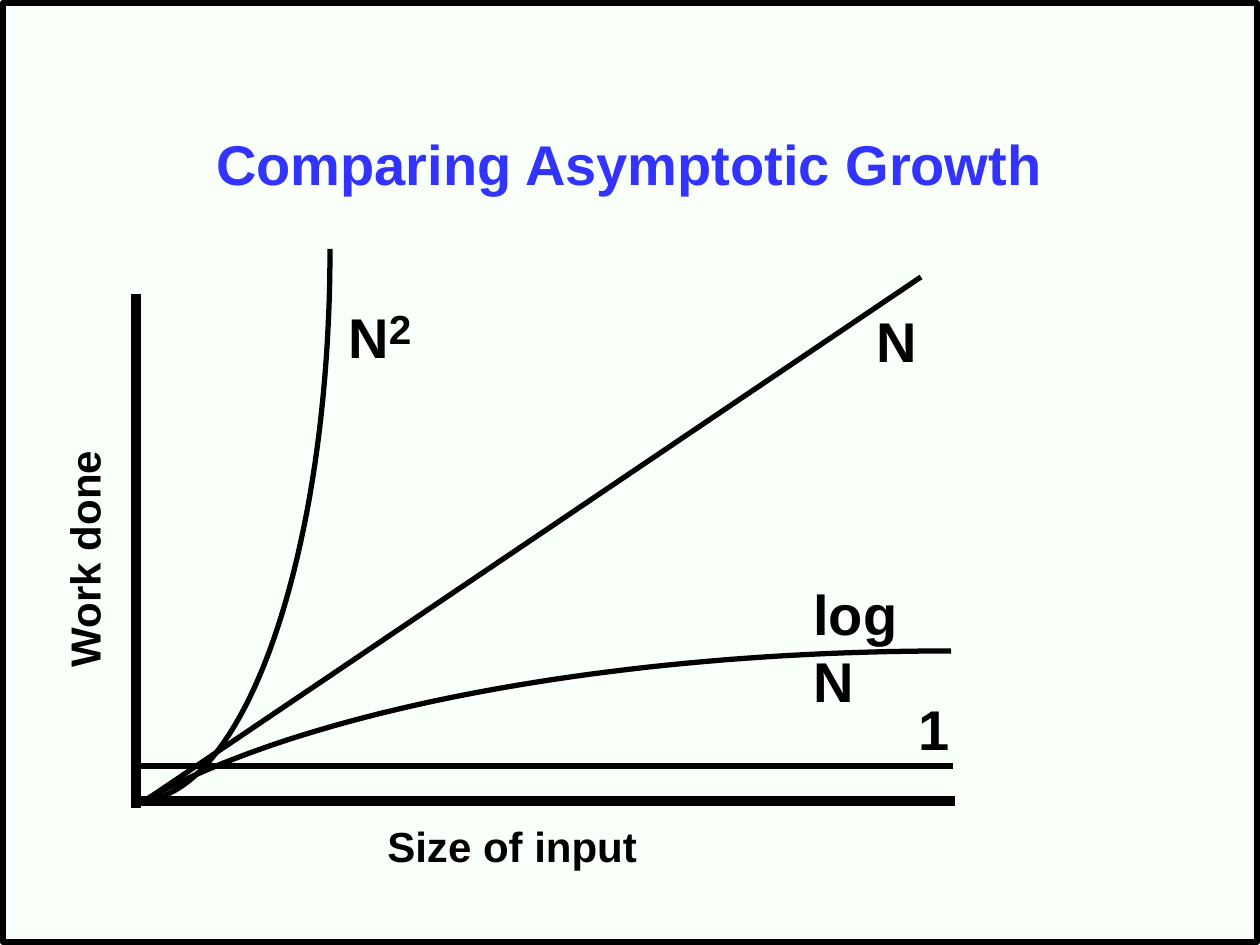
from lxml import etree
from pptx import Presentation
from pptx.dml.color import RGBColor
from pptx.enum.shapes import MSO_CONNECTOR, MSO_SHAPE
from pptx.enum.text import MSO_ANCHOR, PP_ALIGN
from pptx.oxml.ns import qn
from pptx.util import Pt

STRAIGHT = MSO_CONNECTOR.STRAIGHT
RECT = MSO_SHAPE.RECTANGLE
LEFT, CENTER = PP_ALIGN.LEFT, PP_ALIGN.CENTER
TOP, MIDDLE = MSO_ANCHOR.TOP, MSO_ANCHOR.MIDDLE
PX = 914400 / 126
STEPS = 48
BLACK = "000000"

prs = Presentation()
prs.slide_width = round(1260 * PX)
prs.slide_height = round(945 * PX)
s = prs.slides.add_slide(prs.slide_layouts[6])
s.background.fill.solid()
s.background.fill.fore_color.rgb = RGBColor.from_string("F9FFF9")


def style_line(shape, width):
    shape.line.color.rgb = RGBColor.from_string(BLACK)
    shape.line.width = Pt(width)


def add_text(text, x, y, w, h, size=32, color=BLACK, align=LEFT, anchor=TOP,
             wrap=False, rotation=0, sup=""):
    sp = s.shapes.add_textbox(*[round(v * PX) for v in (x, y, w, h)])
    sp.rotation = rotation
    tf = sp.text_frame
    tf.word_wrap = wrap
    tf.vertical_anchor = anchor
    p = tf.paragraphs[0]
    p.alignment = align
    p.line_spacing = Pt(size * 1.2)
    for part, part_size, baseline in ((text, size, 0), (sup, 40, 20000)):
        if not part:
            continue
        r = p.add_run()
        r.text = part
        r.font.name = "Arial"
        r.font.size = Pt(part_size)
        r.font.bold = True
        r.font.color.rgb = RGBColor.from_string(color)
        if baseline:
            r._r.get_or_add_rPr().set("baseline", str(baseline))


frame = s.shapes.add_shape(RECT, *[round(v * PX) for v in (3, 3, 1254, 939)])
frame.shadow.inherit = False
frame.fill.background()
style_line(frame, 3.75)

curves = [
    [(330, 249), (330, 554), (244, 801), (137, 801)],
    [(951, 651), (615, 651), (304, 709), (140, 803)],
]
for curve in curves:
    points = []
    for i in range(STEPS + 1):
        t = i / STEPS
        weights = ((1 - t) ** 3, 3 * t * (1 - t) ** 2, 3 * t * t * (1 - t), t ** 3)
        points.append(tuple(
            round(PX * sum(w * c[axis] for w, c in zip(weights, curve)))
            for axis in (0, 1)))
    builder = s.shapes.build_freeform(*points[0])
    builder.add_line_segments(points[1:], close=False)
    sp = builder.convert_to_shape()
    sp.shadow.inherit = False
    sp.fill.background()
    style_line(sp, 3)

lines = [
    (136, 294, 136, 808, 6),
    (131, 801, 955, 801, 6),
    (134, 766, 953, 766, 3),
    (146, 800, 921, 277, 3),
]
for x1, y1, x2, y2, width in lines:
    cx = s.shapes.add_connector(STRAIGHT, *[round(v * PX) for v in (x1, y1, x2, y2)])
    style_line(cx, width)
    etree.SubElement(cx._element.spPr, qn("a:effectLst"))

add_text("Comparing Asymptotic Growth", 94, 84, 1071, 158, color="3333FF",
         align=CENTER, anchor=MIDDLE, wrap=True)
add_text("N", 864, 300, 66, 79)
add_text("log N", 801, 573, 130, 146, wrap=True)
add_text("N", 336, 299, 92, 79, sup="2")
add_text("1", 906, 688, 57, 79)
add_text("Size of input", 375, 814, 275, 63, size=24)
add_text("Work done", -37, 527, 242, 63, size=24, rotation=270)

prs.save("out.pptx")
